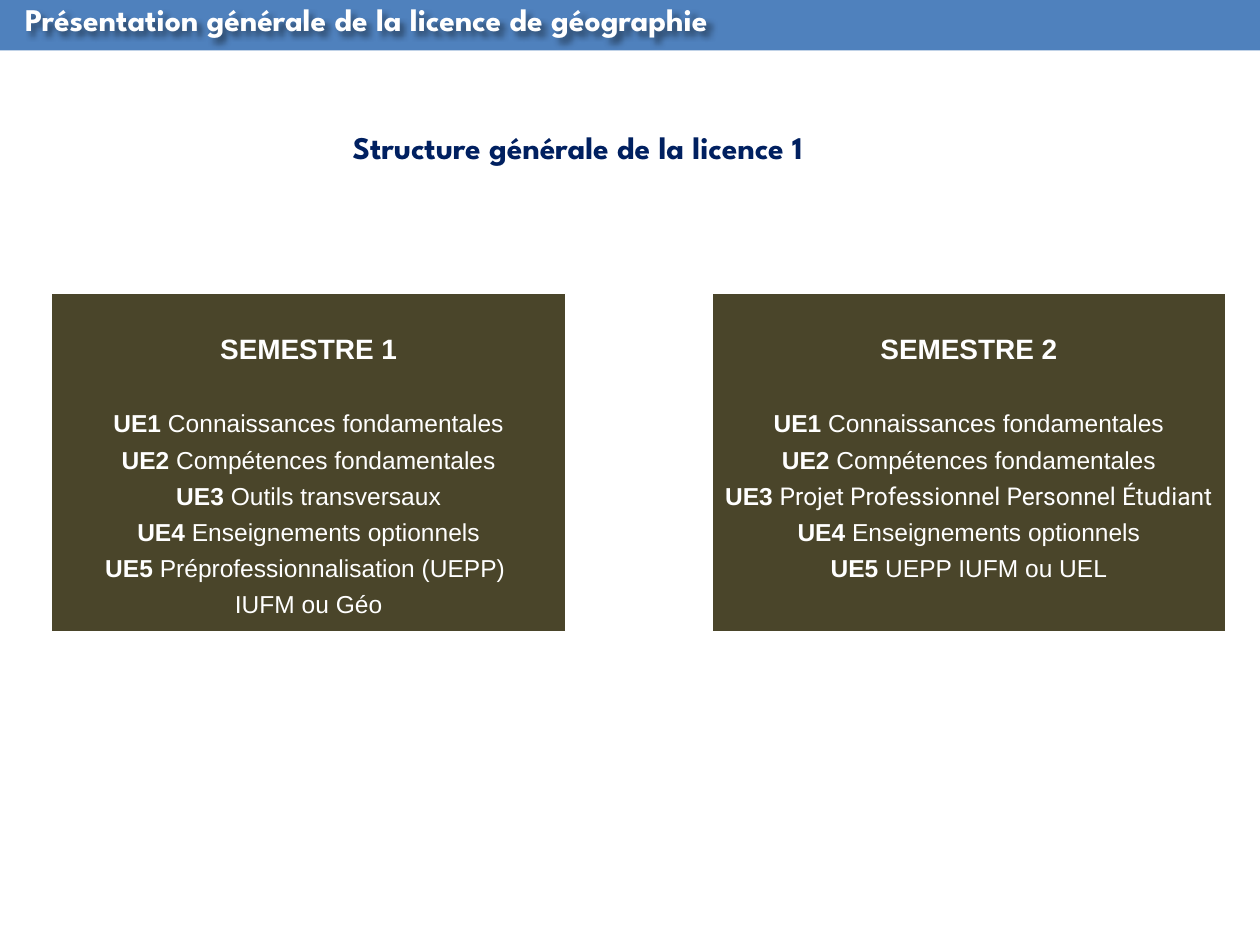
from typing import NamedTuple

from lxml.etree import fromstring
from pptx import Presentation
from pptx.dml.color import RGBColor
from pptx.enum.shapes import MSO_SHAPE
from pptx.enum.text import MSO_ANCHOR, MSO_AUTO_SIZE, PP_ALIGN
from pptx.util import Inches, Pt

BLUE = RGBColor(0x4F, 0x81, 0xBD)
NAVY = RGBColor(0x00, 0x20, 0x60)
OLIVE = RGBColor(0x4A, 0x45, 0x2A)
WHITE = RGBColor(0xFF, 0xFF, 0xFF)
HEAD_FONT = "League Spartan"
BODY_FONT = "Arial"
SHADOW = (
    '<a:effectLst xmlns:a="http://schemas.openxmlformats.org/drawingml/2006/main">'
    '<a:outerShdw blurRad="38100" dist="38100" dir="2700000" algn="tl">'
    '<a:srgbClr val="000000"><a:alpha val="43000"/></a:srgbClr>'
    "</a:outerShdw></a:effectLst>"
)


class Unit(NamedTuple):
    code: str
    name: str
    font: str = BODY_FONT


class Term(NamedTuple):
    left: float
    title: str
    units: list[Unit]


BASE = Unit("UE1", " Connaissances fondamentales")
SKILLS = Unit("UE2", " Compétences fondamentales")
OPTIONS = Unit("UE4", " Enseignements optionnels")
TERMS = [
    Term(0.41, "SEMESTRE 1", [
        BASE,
        SKILLS,
        Unit("UE3", " Outils transversaux"),
        OPTIONS,
        Unit("UE5", " Préprofessionnalisation (UEPP) "),
        Unit("", "IUFM ou Géo"),
    ]),
    Term(5.65, "SEMESTRE 2", [
        BASE,
        SKILLS,
        Unit("UE3 ", "Projet Professionnel Personnel Étudiant", "Roboto"),
        OPTIONS,
        Unit("UE5", " UEPP IUFM ou UEL"),
    ]),
]


def style(para, size: float, color: RGBColor, font: str) -> None:
    para.font.size = Pt(size)
    para.font.color.rgb = color
    para.font.name = font


def add_rect(slide, left: float, top: float, width: float, height: float,
             fill: RGBColor):
    rect = slide.shapes.add_shape(
        MSO_SHAPE.RECTANGLE, Inches(left), Inches(top), Inches(width), Inches(height))
    rect.shadow.inherit = False
    rect.fill.solid()
    rect.fill.fore_color.rgb = fill
    return rect


def add_header(slide, text: str) -> None:
    bar = add_rect(slide, 0, 0, 10, 0.4, BLUE)
    bar.line.fill.background()
    title = slide.shapes.title
    title.element.addprevious(bar.element)
    title.left, title.top = Inches(0), Inches(-0.11)
    title.width, title.height = Inches(9.17), Inches(0.52)
    title.element.spPr.append(fromstring(SHADOW))
    frame = title.text_frame
    frame.text = text
    frame.auto_size = MSO_AUTO_SIZE.NONE
    frame.vertical_anchor = MSO_ANCHOR.MIDDLE
    frame.margin_left = Inches(0.2)
    para = frame.paragraphs[0]
    para.alignment = PP_ALIGN.LEFT
    style(para, 18, WHITE, HEAD_FONT)
    para.font.bold = True


def add_heading(slide, text: str) -> None:
    box = slide.shapes.add_textbox(Inches(2.7), Inches(0.97), Inches(4.37), Inches(0.4))
    frame = box.text_frame
    frame.text = text
    frame.word_wrap = False
    frame.auto_size = MSO_AUTO_SIZE.SHAPE_TO_FIT_TEXT
    para = frame.paragraphs[0]
    style(para, 18, NAVY, HEAD_FONT)
    para.font.bold = True


def add_term(slide, term: Term) -> None:
    card = add_rect(slide, term.left, 2.33, 4.08, 2.68, OLIVE)
    card.line.color.rgb = WHITE
    card.line.width = Pt(0.75)
    frame = card.text_frame
    frame.word_wrap = True
    frame.vertical_anchor = MSO_ANCHOR.TOP
    frame.margin_left = frame.margin_right = frame.margin_bottom = Inches(0.01)
    frame.margin_top = Inches(0.33)

    head = frame.paragraphs[0]
    head.text = term.title
    style(head, 16, WHITE, BODY_FONT)
    head.font.bold = True
    head.space_after = Pt(26.5)
    for unit in term.units:
        para = frame.add_paragraph()
        style(para, 14, WHITE, BODY_FONT)
        para.space_after = Pt(5.5)
        if unit.code:
            code = para.add_run()
            code.text = unit.code
            code.font.bold = True
        name = para.add_run()
        name.text = unit.name
        if unit.font != BODY_FONT:
            name.font.name = unit.font
    for para in frame.paragraphs:
        para.alignment = PP_ALIGN.CENTER
        para.line_spacing = 0.9


def main() -> None:
    deck = Presentation()
    deck.slide_width, deck.slide_height = Inches(10), Inches(7.5)
    slide = deck.slides.add_slide(deck.slide_layouts[5])
    add_header(slide, "Présentation générale de la licence de géographie")
    add_heading(slide, "Structure générale de la licence 1")
    for term in TERMS:
        add_term(slide, term)
    deck.save("out.pptx")


if __name__ == "__main__":
    main()
